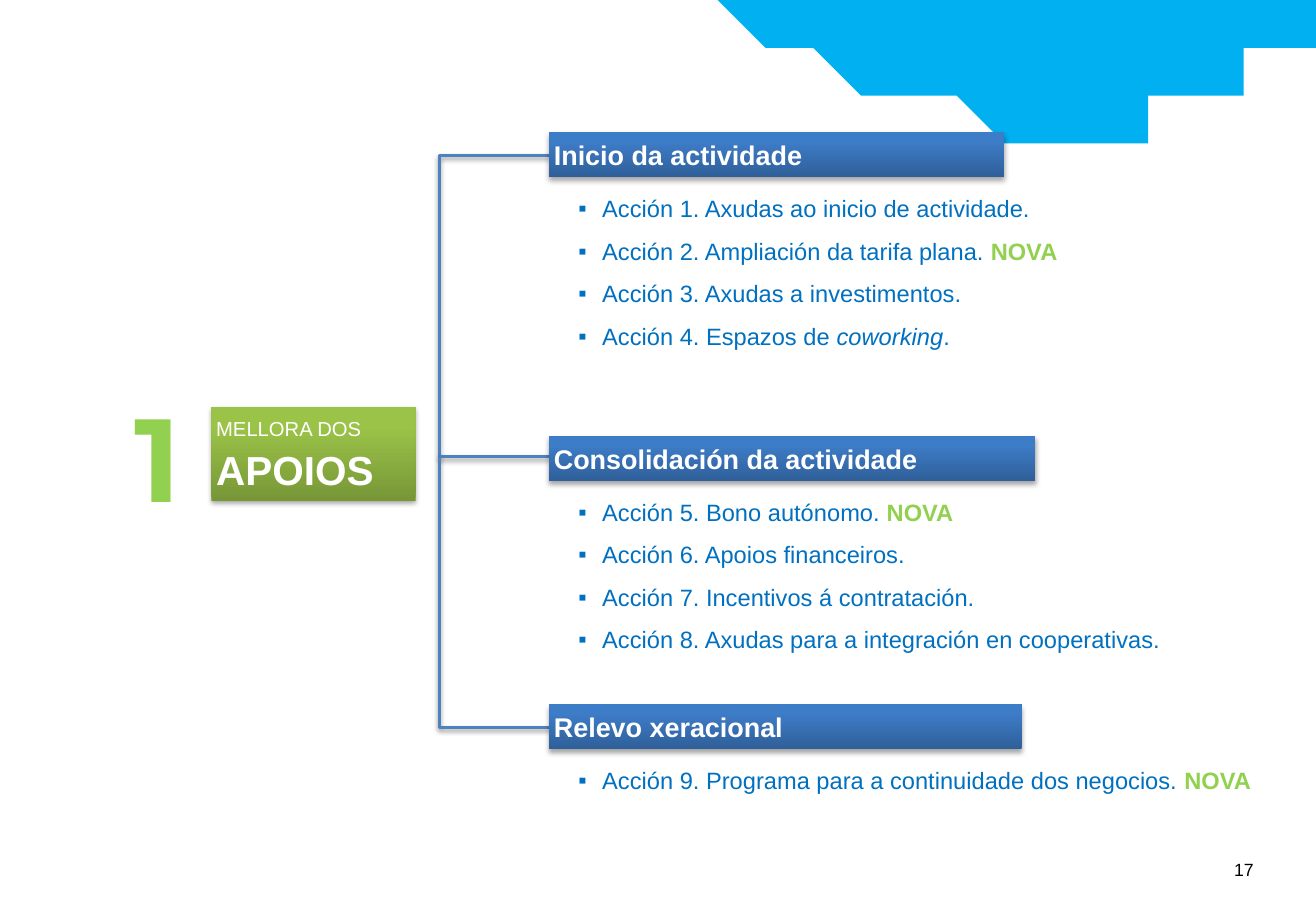
"""Build the slide on the support measures: one programme, three branches, nine actions."""
from lxml import etree
from pptx import Presentation
from pptx.dml.color import RGBColor
from pptx.enum import shapes, text
from pptx.oxml import ns
from pptx.util import Cm, Pt

WHITE = RGBColor(0xFF, 0xFF, 0xFF)
BLACK = RGBColor(0x00, 0x00, 0x00)
SKY = RGBColor(0x00, 0xB0, 0xF0)
BLUE = RGBColor(0x00, 0x70, 0xC0)
LIME = RGBColor(0x92, 0xD0, 0x50)
BRANCH_BLUE = RGBColor(0x4F, 0x81, 0xBD)
BLUE_FADE = RGBColor(0x2F, 0x5F, 0x99), RGBColor(0x3D, 0x7C, 0xC7)
GREEN_FADE = RGBColor(0x77, 0x97, 0x37), RGBColor(0x9B, 0xC3, 0x48)


def add_words(paragraph, words, **formats):
    run = paragraph.add_run()
    run.text = words
    font = run.font
    font.color.rgb = formats.pop("color")
    for attribute, value in ({"name": "Arial"} | formats).items():
        setattr(font, attribute, value)


def add_shadow(shape, distance, opacity):
    effects = etree.SubElement(shape._element.spPr, ns.qn("a:effectLst"))
    shadow = etree.SubElement(effects, ns.qn("a:outerShdw"), blurRad=str(Pt(3.1)),
                              dist=str(Pt(distance)), dir="5400000", rotWithShape="0")
    black = etree.SubElement(shadow, ns.qn("a:srgbClr"), val="000000")
    etree.SubElement(black, ns.qn("a:alpha"), val=str(opacity * 1000))


deck = Presentation()
deck.slide_width, deck.slide_height = Cm(27.51), Cm(19.05)
slide = deck.slides.add_slide(deck.slide_layouts[6])
items = slide.shapes

wave_start = (14.4, 0)
wave_curves = [
    ((15.16, 0.48), (19.51, 2.62), (21.69, 2.77)),
    ((23.88, 2.92), (26.54, 1.37), (27.51, 0.89)),
]
STEPS = 20
wave_points = []
corner = wave_start
for pull_out, pull_in, end in wave_curves:
    for step in range(1, STEPS + 1):
        t = step / STEPS
        weights = ((1 - t) ** 3, 3 * t * (1 - t) ** 2, 3 * t ** 2 * (1 - t), t ** 3)
        knots = (corner, pull_out, pull_in, end)
        wave_points.append(tuple(sum(w * k[axis] for w, k in zip(weights, knots))
                                 for axis in (0, 1)))
    corner = end
outline = items.build_freeform(*wave_start, scale=Cm(1))
outline.add_line_segments(wave_points + [(27.51, 0)], close=True)
wave = outline.convert_to_shape()
wave.shadow.inherit = False
wave.fill.solid()
wave.fill.fore_color.rgb = SKY
wave.line.fill.background()

HEADING_LEFT, HEADING_HEIGHT = 11.48, 0.94
TRUNK_X, TRUNK_Y = 9.19, 9.55
branches = [
    ("Inicio da actividade", 2.77, 9.52, 3.25, [
        [("Acción 1. Axudas ao inicio de actividade.", {})],
        [("Acción 2. Ampliación da tarifa plana. ", {}), ("NOVA", {"color": LIME, "bold": True})],
        [("Acción 3. Axudas a investimentos.", {})],
        [("Acción 4. Espazos de ", {}), ("coworking", {"italic": True}), (".", {})],
    ]),
    ("Consolidación da actividade", 9.12, 10.16, TRUNK_Y, [
        [("Acción 5. Bono autónomo. ", {}), ("NOVA", {"color": LIME, "bold": True})],
        [("Acción 6. Apoios financeiros.", {})],
        [("Acción 7. Incentivos á contratación.", {})],
        [("Acción 8. Axudas para a integración en cooperativas.", {})],
    ]),
    ("Relevo xeracional", 14.73, 9.88, 15.21, [
        [("Acción 9. Programa para a continuidade dos negocios. ", {}),
         ("NOVA", {"color": LIME, "bold": True})],
    ]),
]

for heading, top, width, branch_y, actions in branches:
    straight = branch_y == TRUNK_Y
    kind = shapes.MSO_CONNECTOR.STRAIGHT if straight else shapes.MSO_CONNECTOR.ELBOW
    branch = items.add_connector(kind, Cm(TRUNK_X), Cm(TRUNK_Y), Cm(HEADING_LEFT), Cm(branch_y))
    branch.line.color.rgb = BRANCH_BLUE
    branch.line.width = Pt(2)
    add_shadow(branch, 1.6, 38)
    if not straight:
        bend = branch._element.spPr.find(ns.qn("a:prstGeom")).find(ns.qn("a:avLst"))
        etree.SubElement(bend, ns.qn("a:gd"), name="adj1", fmla="val 0")

    action_list = items.add_textbox(Cm(11.84), Cm(top + 0.87), Cm(14.68),
                                    Cm(0.25 + 0.9 * len(actions))).text_frame
    action_list.word_wrap = True
    for number, action in enumerate(actions):
        line = action_list.add_paragraph() if number else action_list.paragraphs[0]
        layout = line._p.get_or_add_pPr()
        layout.set("marL", str(Cm(0.5)))
        layout.set("indent", str(Cm(-0.5)))
        etree.SubElement(layout, ns.qn("a:buFont"), typeface="Arial")
        etree.SubElement(layout, ns.qn("a:buChar"), char="▪")
        line.line_spacing = 1.5
        for words, formats in action:
            add_words(line, words, **({"size": Pt(14), "color": BLUE} | formats))

banners = [(HEADING_LEFT, top, width, HEADING_HEIGHT, BLUE_FADE, 1.0,
            [(heading, {"size": Pt(16), "bold": True})])
           for heading, top, width, _, _ in branches]
banners.append((4.42, 8.51, 4.27, 1.96, GREEN_FADE, 1.1,
                [("MELLORA DOS ", {"size": Pt(12)}), ("APOIOS", {"size": Pt(24), "bold": True})]))
for left, top, width, height, fade, spacing, runs in banners:
    banner = items.add_shape(shapes.MSO_SHAPE.RECTANGLE, Cm(left), Cm(top), Cm(width), Cm(height))
    banner.fill.gradient()
    banner.fill.gradient_angle = 90
    for stop, color, position in zip(banner.fill.gradient_stops, fade, (0, 0.8)):
        stop.color.rgb = color
        stop.position = position
    banner.line.fill.background()
    add_shadow(banner, 1.8, 35)
    frame = banner.text_frame
    for attribute, value in {"margin_left": Cm(0.1), "margin_right": Cm(0.1),
                             "margin_top": Cm(0.13), "margin_bottom": Cm(0.13),
                             "word_wrap": True,
                             "vertical_anchor": text.MSO_ANCHOR.MIDDLE}.items():
        setattr(frame, attribute, value)
    title = frame.paragraphs[0]
    title.alignment = text.PP_ALIGN.LEFT
    title.line_spacing = spacing
    for words, formats in runs:
        add_words(title, words, color=WHITE, **formats)

numerals = [
    ("1", 2.57, 7.92, 2.18, 3.25,
     {"name": "Montserrat", "size": Pt(70), "bold": True, "color": LIME}),
    ("17", 25.55, 17.83, 1.19, 0.71, {"size": Pt(10.5), "color": BLACK}),
]
for digits, left, top, width, height, formats in numerals:
    numeral = items.add_textbox(Cm(left), Cm(top), Cm(width), Cm(height)).text_frame
    numeral.word_wrap = False
    add_words(numeral.paragraphs[0], digits, **formats)

deck.save("out.pptx")
